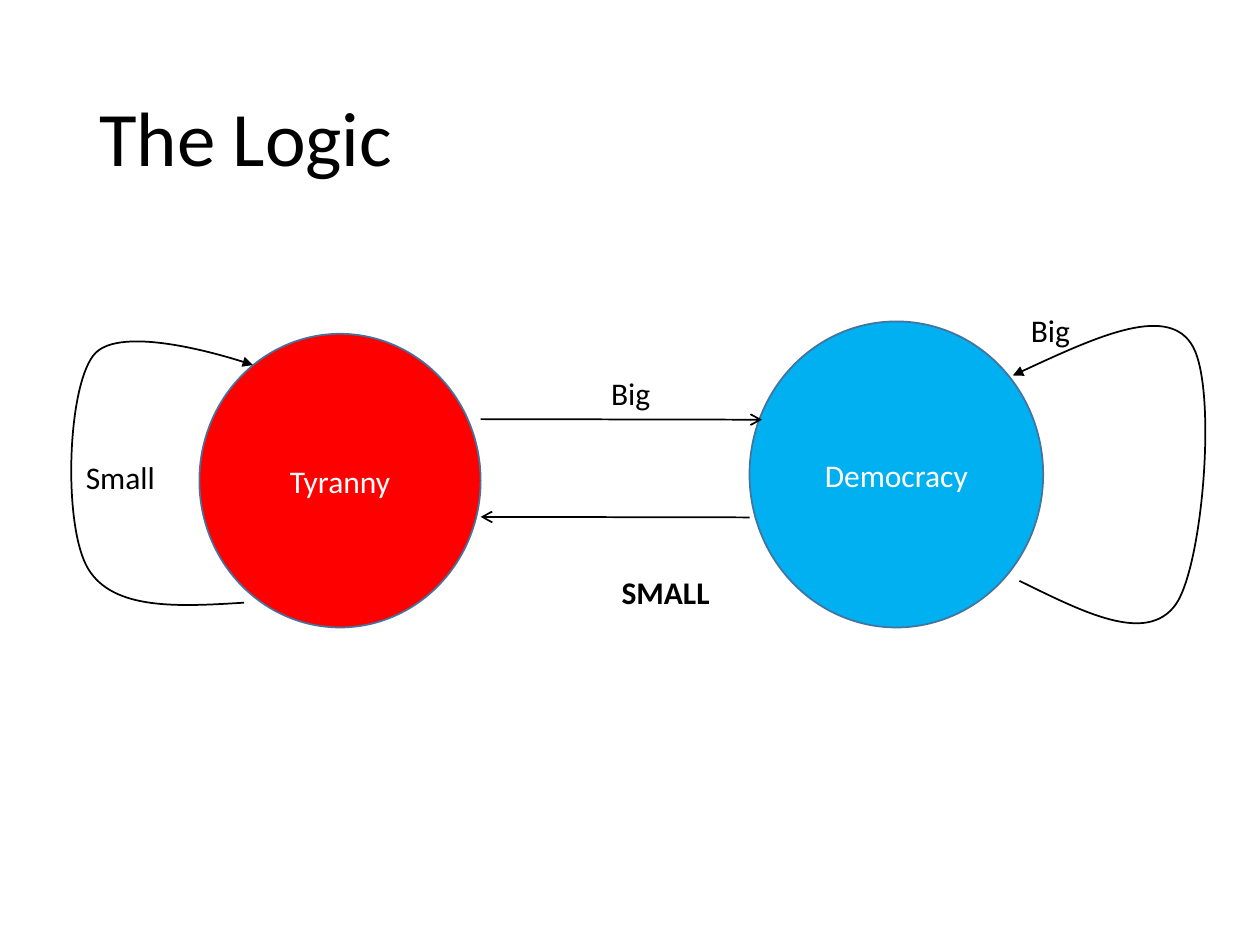
from dataclasses import dataclass

from lxml.etree import SubElement
from pptx import Presentation
from pptx.dml.color import RGBColor
from pptx.enum.shapes import MSO_CONNECTOR, MSO_SHAPE
from pptx.enum.text import MSO_ANCHOR, MSO_AUTO_SIZE, PP_ALIGN
from pptx.oxml.ns import qn
from pptx.util import Cm, Pt

HUES = {
    "black": "000000",
    "white": "FFFFFF",
    "red": "FF0000",
    "blue": "00B0F0",
    "edge": "43739E",
}
FONT = "Calibri"

Point = tuple[float, float]
Curve = tuple[Point, Point, Point]


@dataclass
class State:
    text: str
    left: float
    top: float
    width: float
    height: float
    hue: str


@dataclass
class Label:
    text: str
    left: float
    top: float
    width: float = 2.11
    height: float = 1.07
    size: int = 18
    bold: bool = False


@dataclass
class Link:
    start: Point
    end: Point


@dataclass
class Loop:
    start: Point
    curves: list[Curve]


STATES = [
    State("Tyranny", 4.02, 6.73, 5.67, 5.92, "red"),
    State("Democracy", 15.11, 6.48, 5.92, 6.17, "blue"),
]
LINKS = [
    Link((9.69, 8.45), (15.36, 8.46)),
    Link((15.11, 10.43), (9.69, 10.42)),
]
LOOPS = [
    Loop((4.92, 12.15), [
        ((3.61, 12.23), (2.29, 12.31), (1.78, 11.47)),
        ((1.27, 10.63), (1.35, 7.86), (1.88, 7.17)),
        ((2.39, 6.48), (4.95, 7.31), (4.95, 7.31)),
        ((4.98, 7.32), (5.08, 7.36), (5.1, 7.36)),
    ]),
    Loop((20.55, 11.71), [
        ((21.84, 12.34), (23.11, 13), (23.7, 12.19)),
        ((24.26, 11.4), (24.56, 7.67), (24, 6.91)),
        ((23.47, 6.15), (21.95, 6.86), (20.42, 7.57)),
    ]),
]
TITLE = Label("The Logic", 1.75, 1.02, 21.89, 3.68, 44)
LABELS = [
    Label("Big", 12.07, 7.42),
    Label("Big", 20.53, 6.15),
    Label("SMALL", 12.28, 11.43, 2.54, 1.02, bold=True),
    Label("Small", 1.48, 9.1),
]


def paint(name: str) -> RGBColor:
    return RGBColor.from_string(HUES[name])


def write(frame, text: str, size: int, hue: str, bold: bool = False):
    frame.word_wrap = True
    line = frame.paragraphs[0]
    run = line.add_run()
    run.text = text
    run.font.name = FONT
    run.font.size = Pt(size)
    run.font.bold = bold
    run.font.color.rgb = paint(hue)
    return line


def stroke(shape, hue: str) -> None:
    shape.line.color.rgb = paint(hue)
    shape.line.width = Pt(1)


def point(shape, head: str) -> None:
    stroke(shape, "black")
    props = shape.element.spPr
    SubElement(props.find(qn("a:ln")), qn("a:tailEnd"), type=head)
    SubElement(props, qn("a:effectLst"))


def add_state(shapes, state: State) -> None:
    disc = shapes.add_shape(
        MSO_SHAPE.OVAL, Cm(state.left), Cm(state.top), Cm(state.width), Cm(state.height)
    )
    disc.shadow.inherit = False
    disc.fill.solid()
    disc.fill.fore_color.rgb = paint(state.hue)
    stroke(disc, "edge")
    disc.text_frame.vertical_anchor = MSO_ANCHOR.MIDDLE
    write(disc.text_frame, state.text, 18, "white").alignment = PP_ALIGN.CENTER


def add_link(shapes, link: Link) -> None:
    ends = [Cm(value) for value in (*link.start, *link.end)]
    point(shapes.add_connector(MSO_CONNECTOR.STRAIGHT, *ends), "arrow")


def bend(shape) -> None:
    track = next(shape.element.iter(qn("a:pathLst")))[0]
    sides = track.findall(qn("a:lnTo"))
    for start in range(0, len(sides), 3):
        curve = SubElement(track, qn("a:cubicBezTo"))
        for side in sides[start:start + 3]:
            curve.append(side[0])
            track.remove(side)


def add_loop(shapes, loop: Loop) -> None:
    pen = shapes.build_freeform(Cm(loop.start[0]), Cm(loop.start[1]))
    knots = [(Cm(x), Cm(y)) for curve in loop.curves for x, y in curve]
    pen.add_line_segments(knots, close=False)
    shape = pen.convert_to_shape()
    bend(shape)
    shape.fill.background()
    point(shape, "triangle")


def add_label(shapes, label: Label):
    box = shapes.add_textbox(
        Cm(label.left), Cm(label.top), Cm(label.width), Cm(label.height)
    )
    line = write(box.text_frame, label.text, label.size, "black", label.bold)
    return box.text_frame, line


def main() -> None:
    deck = Presentation()
    deck.slide_width = Cm(25.4)
    deck.slide_height = Cm(19.05)
    shapes = deck.slides.add_slide(deck.slide_layouts[6]).shapes
    frame, line = add_label(shapes, TITLE)
    frame.vertical_anchor = MSO_ANCHOR.MIDDLE
    line.line_spacing = 0.9
    for state in STATES:
        add_state(shapes, state)
    for link in LINKS:
        add_link(shapes, link)
    for loop in LOOPS:
        add_loop(shapes, loop)
    for label in LABELS:
        frame, line = add_label(shapes, label)
        frame.auto_size = MSO_AUTO_SIZE.SHAPE_TO_FIT_TEXT
    deck.save("out.pptx")


if __name__ == "__main__":
    main()
